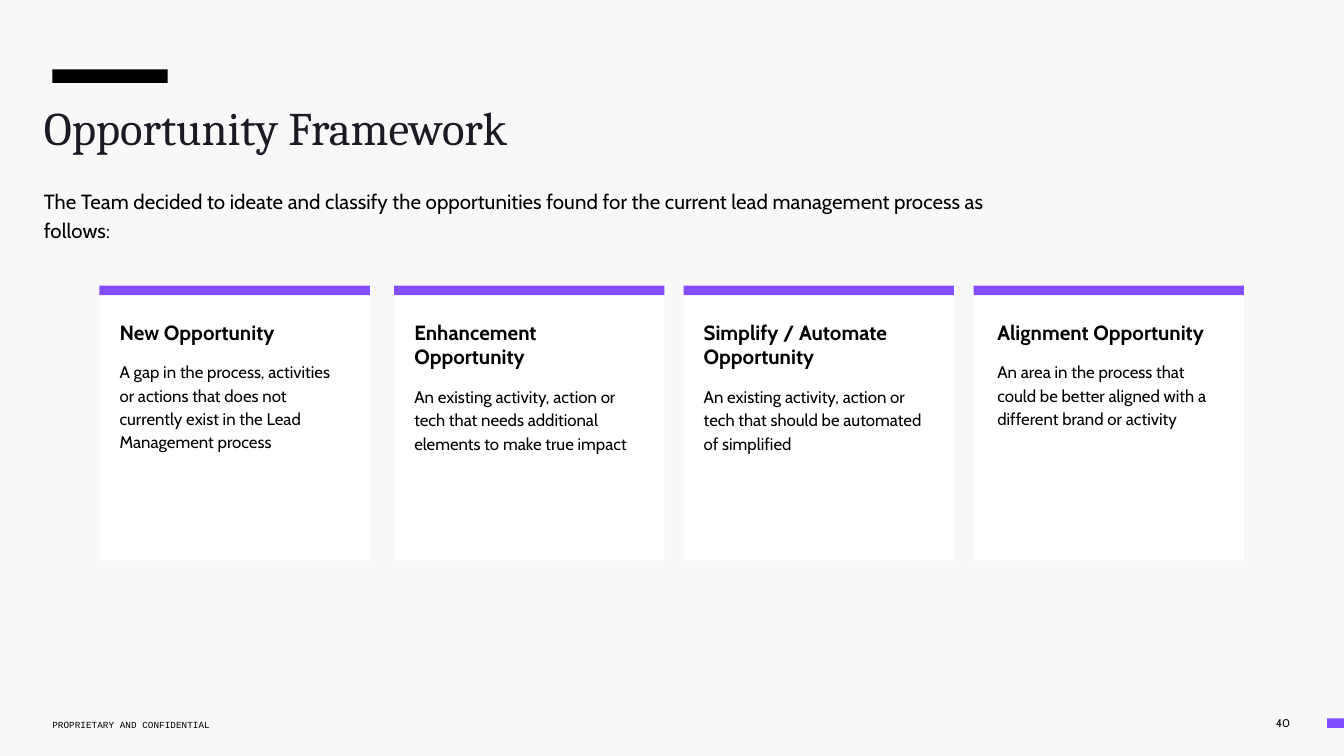
from pptx import Presentation
from pptx.dml.color import RGBColor
from pptx.enum.shapes import MSO_SHAPE as Shape
from pptx.enum.text import MSO_ANCHOR as Anchor, PP_ALIGN as Align
from pptx.util import Cm, Pt

PURPLE = "834EFF"


def add_block(left, top, width, height, color):
    shape = slide.shapes.add_shape(Shape.RECTANGLE, Cm(left), Cm(top), Cm(width), Cm(height))
    shape.shadow.inherit = False
    shape.fill.solid()
    shape.fill.fore_color.rgb = RGBColor.from_string(color)
    shape.line.fill.background()


def add_text(left, top, width, height, paragraphs, margins=(0, 0, 0, 0), anchor=Anchor.TOP):
    box = slide.shapes.add_textbox(Cm(left), Cm(top), Cm(width), Cm(height))
    frame = box.text_frame
    frame.word_wrap = True
    frame.vertical_anchor = anchor
    frame.margin_left, frame.margin_top, frame.margin_right, frame.margin_bottom = map(Cm, margins)
    for index, (text, font, size, color, bold, spacing) in enumerate(paragraphs):
        paragraph = frame.add_paragraph() if index else frame.paragraphs[0]
        paragraph.text = text
        paragraph.line_spacing = spacing
        paragraph.space_before = Pt(8 if index else 0)
        paragraph.font.name = font
        paragraph.font.size = Pt(size)
        paragraph.font.bold = bold
        paragraph.font.color.rgb = RGBColor.from_string(color)
    return frame


presentation = Presentation()
presentation.slide_width = Cm(25.4)
presentation.slide_height = Cm(14.29)
slide = presentation.slides.add_slide(presentation.slide_layouts[6])
slide.background.fill.solid()
slide.background.fill.fore_color.rgb = RGBColor.from_string("F8F8F8")

page_number = add_text(22.48, 13.44, 2.08, 0.46, [("40", "Cabin", 6, "000000", False, 1.0)],
                       (0.18, 0.1, 0.18, 0.1), Anchor.MIDDLE)
page_number.paragraphs[0].alignment = Align.RIGHT
add_block(25.08, 13.58, 0.32, 0.18, PURPLE)
add_block(0.99, 1.31, 2.18, 0.26, "000000")
add_text(0.99, 13.49, 5.54, 0.38,
         [("PROPRIETARY AND CONFIDENTIAL", "Courier New", 5, "000000", False, 1.15)],
         anchor=Anchor.MIDDLE)

add_text(0.83, 1.93, 19.05, 1.47,
         [("Opportunity Framework", "Cambria", 25, "1C1A23", False, 0.97)])
add_text(0.83, 3.43, 18.47, 0.81,
         [("The Team decided to ideate and classify the opportunities found for the current "
           "lead management process as follows:", "Cabin", 11, "000000", False, 1.15)],
         (0, 0.08, 0.46, 0.08))

cards = [
    (1.88, 0.28, "New Opportunity",
     "A gap in the process, activities or actions that does not currently exist in the "
     "Lead Management process"),
    (7.45, 0.28, "Enhancement Opportunity",
     "An existing activity, action or tech that needs additional elements to make true impact"),
    (12.92, 0.28, "Simplify / Automate Opportunity",
     "An existing activity, action or tech that should be automated of simplified"),
    (18.4, 0.35, "Alignment Opportunity",
     "An area in the process that could be better aligned with a different brand or activity"),
]
for left, indent, heading, description in cards:
    add_block(left, 5.4, 5.11, 5.2, "FFFFFF")
    add_block(left, 5.4, 5.11, 0.18, PURPLE)
    add_text(left + indent, 5.94, 4.52, 2.7,
             [(heading, "Cabin", 11, "000000", True, 1.0),
              (description, "Cabin", 9, "000000", False, 1.15)],
             (0.1, 0.1, 0.1, 0.1))

presentation.save("out.pptx")
